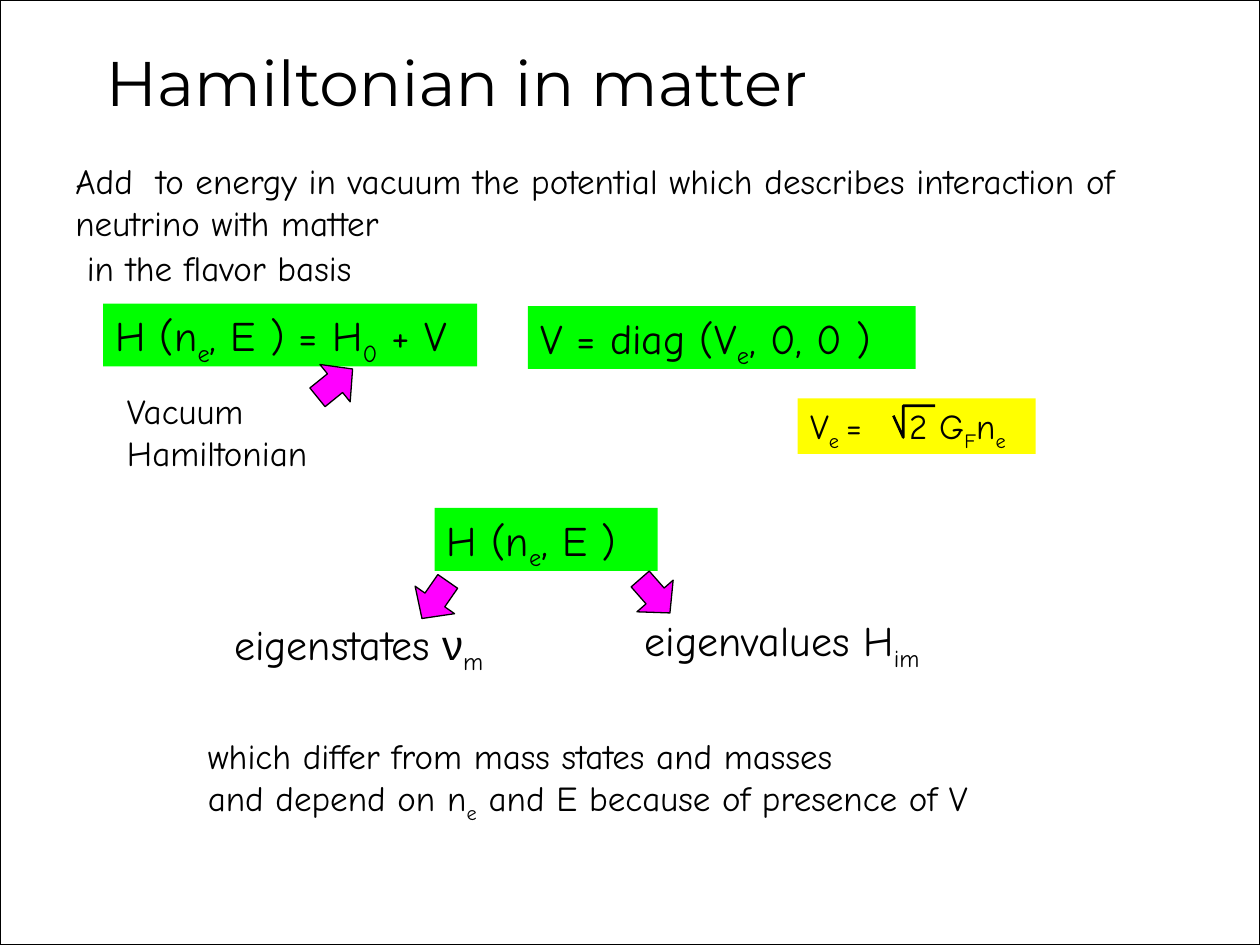
from dataclasses import dataclass

from lxml.etree import SubElement
from pptx import Presentation
from pptx.dml.color import RGBColor
from pptx.enum.shapes import MSO_SHAPE
from pptx.enum.text import MSO_ANCHOR, MSO_AUTO_SIZE, PP_ALIGN
from pptx.oxml.ns import qn
from pptx.util import Cm, Pt


@dataclass(frozen=True)
class Theme:
    """Colours, fonts and type sizes of the slide."""
    ink: RGBColor = RGBColor(0, 0, 0)
    paper: RGBColor = RGBColor(255, 255, 255)
    green: RGBColor = RGBColor(0, 255, 0)
    yellow: RGBColor = RGBColor(255, 255, 0)
    pink: RGBColor = RGBColor(255, 0, 255)
    head: str = "Montserrat"
    body: str = "Comic Neue"
    greek: str = "Arial"
    title: int = 36
    large: int = 24
    small: int = 20


THEME = Theme()


def spot(box, left, top, width, height):
    """Turn a place inside a box into slide lengths."""
    return Cm(box[0] + left), Cm(box[1] + top), Cm(width), Cm(height)


def style(run, size, font):
    """Format one run in the ink colour."""
    run.font.size = Pt(size)
    run.font.name = font
    run.font.color.rgb = THEME.ink


def write(shape, lines, size):
    """Write lines whose pieces alternate between base and subscript at each underscore."""
    frame = shape.text_frame
    frame.word_wrap = True
    frame.auto_size = MSO_AUTO_SIZE.SHAPE_TO_FIT_TEXT
    frame.vertical_anchor = MSO_ANCHOR.TOP
    for row, line in enumerate(lines):
        para = frame.add_paragraph() if row else frame.paragraphs[0]
        para.alignment = PP_ALIGN.LEFT
        for part, piece in enumerate(line.split("_")):
            if not piece:
                continue
            run = para.add_run()
            run.text = piece
            style(run, size, THEME.greek if "ν" in piece else THEME.body)
            if part % 2:
                run.font._element.set("baseline", "-25000")


def label(slide, place, *lines, size=THEME.small):
    """Add plain text."""
    write(slide.shapes.add_textbox(*place), lines, size)


def shape(slide, kind, place, fill, line=None):
    """Add a flat preset shape, outlined when a line width is given."""
    item = slide.shapes.add_shape(kind, *place)
    item.shadow.inherit = False
    item.fill.solid()
    item.fill.fore_color.rgb = fill
    if line:
        item.line.color.rgb = THEME.ink
        item.line.width = Pt(line)
    else:
        item.line.fill.background()
    return item


def panel(slide, place, line, size=THEME.large, fill=THEME.green):
    """Add a formula on a coloured panel."""
    item = shape(slide, MSO_SHAPE.RECTANGLE, place, fill)
    write(item, [line], size)
    return item


def arrow(slide, box, left, top, angle):
    """Add a turned block arrow."""
    place = spot(box, left, top, 0.91, 0.97)
    shape(slide, MSO_SHAPE.RIGHT_ARROW, place, THEME.pink, 0.75).rotation = angle


def root(slide, box, left, top):
    """Draw a square root sign."""
    marks = [(0, 0.2), (0.2, 0.64), (0.2, 0), (0.84, 0)]
    dots = [spot(box, left + x, top + y, 0, 0)[:2] for x, y in marks]
    path = slide.shapes.build_freeform(*dots[0])
    path.add_line_segments(dots[1:], close=False)
    sign = path.convert_to_shape()
    sign.shadow.inherit = False
    sign.fill.background()
    sign.line.color.rgb = THEME.ink
    sign.line.width = Pt(1.5)


def header(slide, box):
    """Place and format the title."""
    title = slide.shapes.title
    title.left, title.top, title.width, title.height = spot(box, 0, 0, *box[2:])
    frame = title.text_frame
    frame.text = "Hamiltonian in matter"
    frame.word_wrap = False
    frame.auto_size = MSO_AUTO_SIZE.NONE
    frame.vertical_anchor = MSO_ANCHOR.TOP
    para = frame.paragraphs[0]
    para.alignment = PP_ALIGN.CENTER
    style(para.runs[0], THEME.title, THEME.head)


def border(slide, box):
    """Frame the slide behind all other parts."""
    back = shape(slide, MSO_SHAPE.RECTANGLE, spot(box, 0, 0, *box[2:]), THEME.paper, 1)
    slide.shapes.title._element.addprevious(back._element)


def intro(slide, box):
    """Place the opening statement."""
    label(slide, spot(box, 0, 0, box[2], 1.96),
          "Add  to energy in vacuum the potential which describes "
          "interaction of neutrino with matter")
    label(slide, spot(box, 0.23, 1.75, 6.86, 1.12), "in the flavor basis")


def sums(slide, box):
    """Place the Hamiltonian, its vacuum part and the potential."""
    panel(slide, spot(box, 0, 0, 7.54, 1.27), "H (n_e_, E ) = H_0_ + V")
    panel(slide, spot(box, 8.56, 0.05, 7.82, 1.27), "V = diag (V_e_, 0, 0 )")
    label(slide, spot(box, 0.23, 1.6, 4.42, 1.96), "Vacuum Hamiltonian")
    arrow(slide, box, 4.22, 1.12, 321)
    value = panel(slide, spot(box, 14, 1.91, 4.8, 1.12), "V_e _=\t2 G_F_n_e",
                  THEME.small, THEME.yellow)
    props = value.text_frame.paragraphs[0]._p.get_or_add_pPr()
    stops = SubElement(props, qn("a:tabLst"))
    SubElement(stops, qn("a:tab"), pos=str(Cm(2)), algn="l")
    root(slide, box, 15.93, 2.06)


def eigen(slide, box):
    """Place the Hamiltonian with its eigenstates and eigenvalues."""
    panel(slide, spot(box, 4.29, 0, 4.5, 1.27), "H (n_e_, E )")
    label(slide, spot(box, 0, 2.1, 6.35, 1.27), "eigenstates__ ν_m", size=THEME.large)
    label(slide, spot(box, 8.28, 2.03, 6.86, 1.27), "eigenvalues H_im", size=THEME.large)
    arrow(slide, box, 3.84, 1.37, 124.8)
    arrow(slide, box, 8.28, 1.29, 48.8)


def note(slide, box):
    """Place the closing remark."""
    label(slide, spot(box, 0, 0, *box[2:]),
          "which differ from mass states and masses",
          "and depend on n_e_ and E because of presence of V")


def main():
    """Build and save the slide."""
    deck = Presentation()
    deck.slide_width, deck.slide_height = Cm(25.4), Cm(19.05)
    slide = deck.slides.add_slide(deck.slide_layouts.get_by_name("Title Only"))
    header(slide, (1.42, 0.74, 15.57, 1.7))
    border(slide, (0, 0, 25.4, 19.05))
    intro(slide, (1.27, 3.1, 23.52, 2.87))
    sums(slide, (2.08, 6.12, 18.8, 3.56))
    eigen(slide, (4.47, 10.24, 15.14, 3.37))
    note(slide, (3.94, 14.68, 16.94, 1.96))
    deck.save("out.pptx")


if __name__ == "__main__":
    main()
